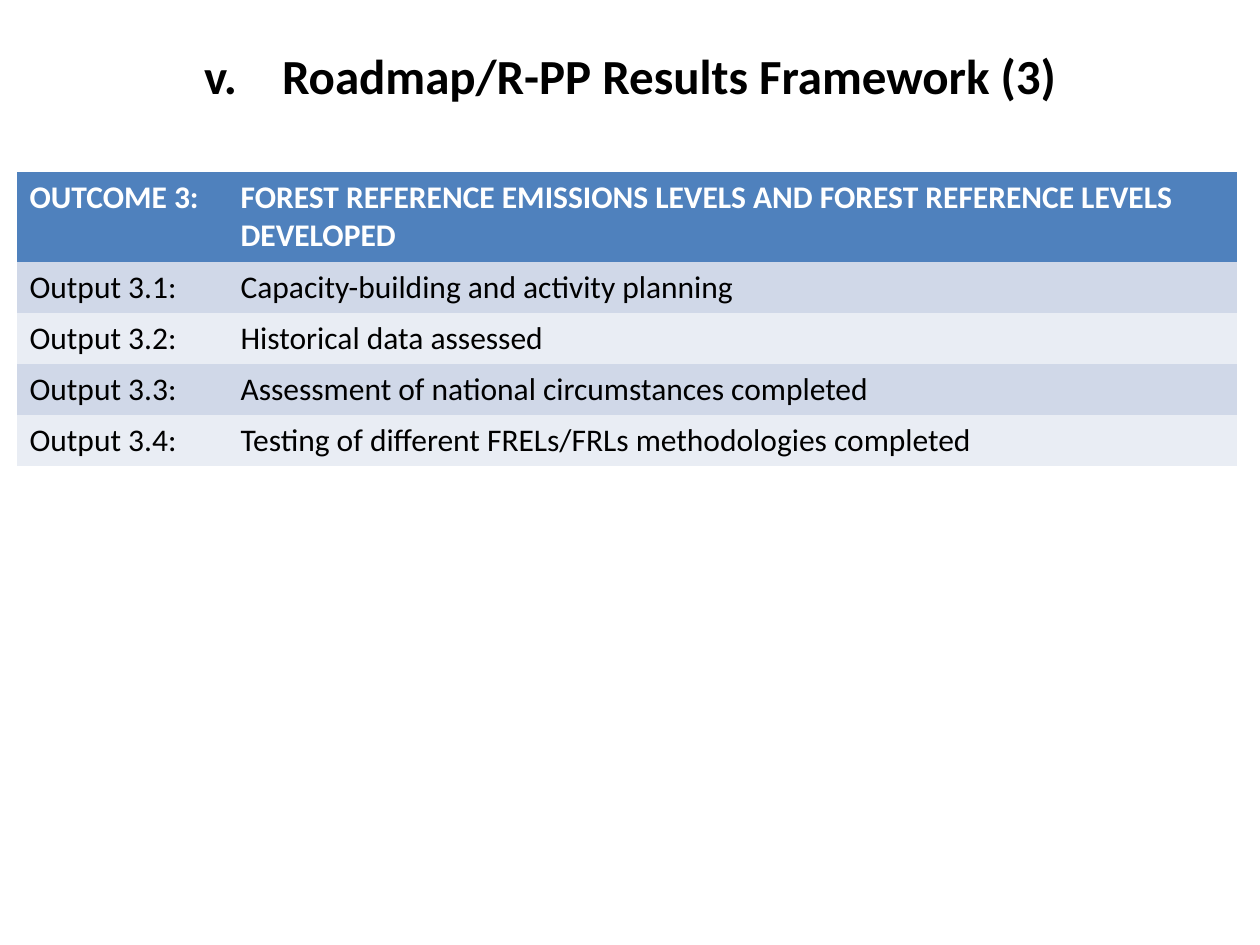
from dataclasses import dataclass

from lxml.etree import SubElement
from pptx import Presentation
from pptx.dml.color import RGBColor as Color
from pptx.enum.text import MSO_ANCHOR as Anchor, PP_ALIGN as Align
from pptx.oxml.ns import qn
from pptx.util import Emu, Pt

PX_PER_INCH = 126


def px(length):
    return Emu(round(length * 914400 / PX_PER_INCH))


@dataclass(frozen=True)
class Theme:
    font: str = "Calibri"
    title_size: int = 28
    table_size: int = 18
    ink: str = "000000"
    header_ink: str = "FFFFFF"
    header_fill: str = "4F81BD"
    band_fills: tuple = ("D0D8E8", "E9EDF4")


class SlideBuilder:
    def __init__(self, page, theme):
        self.page = page
        self.theme = theme

    def style(self, para, size, color, bold):
        for span in para.runs:
            span.font.name = self.theme.font
            span.font.size = Pt(size)
            span.font.bold = bold
            span.font.color.rgb = Color.from_string(color)

    def numbered_title(self, text, number, left, top, width, height):
        box = self.page.shapes.add_textbox(px(left), px(top), px(width), px(height))
        frame = box.text_frame
        frame.word_wrap = True
        frame.vertical_anchor = Anchor.MIDDLE
        frame.text = text
        para = frame.paragraphs[0]
        para.alignment = Align.CENTER
        para.line_spacing = 0.9
        para.space_before = Pt(5.6)
        para.space_after = Pt(12)
        self.style(para, self.theme.title_size, self.theme.ink, True)

        # Roman numeral with a hanging indent
        props = para._p.get_or_add_pPr()
        indent = px(78)
        props.set("marL", str(indent))
        props.set("indent", str(-indent))
        SubElement(props, qn("a:buFont"), typeface="+mj-lt")
        SubElement(props, qn("a:buAutoNum"), type="romanLcPeriod", startAt=str(number))

    def banded_table(self, rows, left, top, widths, header_height, row_height):
        heights = [header_height] + [row_height] * (len(rows) - 1)
        table = self.page.shapes.add_table(
            len(rows), len(widths), px(left), px(top), px(sum(widths)), px(sum(heights))
        ).table
        for column, width in zip(table.columns, widths):
            column.width = px(width)
        for index, (values, height) in enumerate(zip(rows, heights)):
            table.rows[index].height = px(height)
            header = index == 0
            bands = self.theme.band_fills
            fill = self.theme.header_fill if header else bands[(index - 1) % len(bands)]
            ink = self.theme.header_ink if header else self.theme.ink
            for cell, value in zip(table.rows[index].cells, values):
                cell.fill.solid()
                cell.fill.fore_color.rgb = Color.from_string(fill)
                cell.text_frame.text = value
                self.style(cell.text_frame.paragraphs[0], self.theme.table_size, ink, header)
        # Plain fills without the default white grid
        table._tbl.tblPr.find(qn("a:tableStyleId")).text = (
            "{2D5ABB26-0587-4C30-8999-92F81FD0307C}"
        )


OUTCOME = (
    "OUTCOME 3:",
    "FOREST REFERENCE EMISSIONS LEVELS AND FOREST REFERENCE LEVELS DEVELOPED",
)
OUTPUTS = (
    "Capacity-building and activity planning",
    "Historical data assessed",
    "Assessment of national circumstances completed",
    "Testing of different FRELs/FRLs methodologies completed",
)


def main():
    deck = Presentation()
    deck.slide_width, deck.slide_height = px(1260), px(945)
    page = deck.slides.add_slide(deck.slide_layouts[6])
    builder = SlideBuilder(page, Theme())

    # Title
    builder.numbered_title("Roadmap/R-PP Results Framework (3)", 5, 0, 0, 1260, 158)

    # Outcome and its outputs
    rows = [OUTCOME] + [(f"Output 3.{n}:", text) for n, text in enumerate(OUTPUTS, 1)]
    builder.banded_table(rows, 17, 172, (211, 1009), header_height=90, row_height=51)

    deck.save("out.pptx")


if __name__ == "__main__":
    main()
